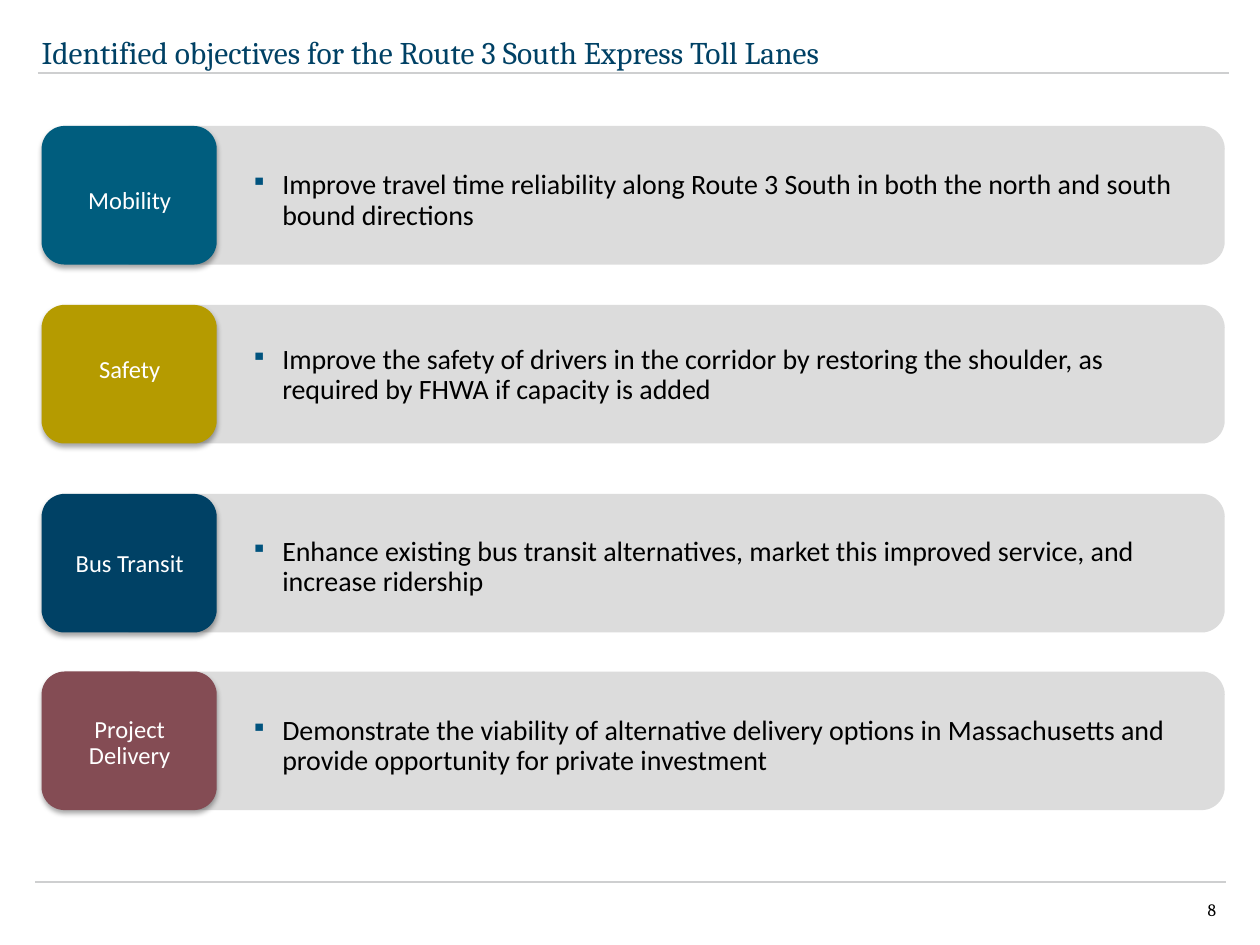
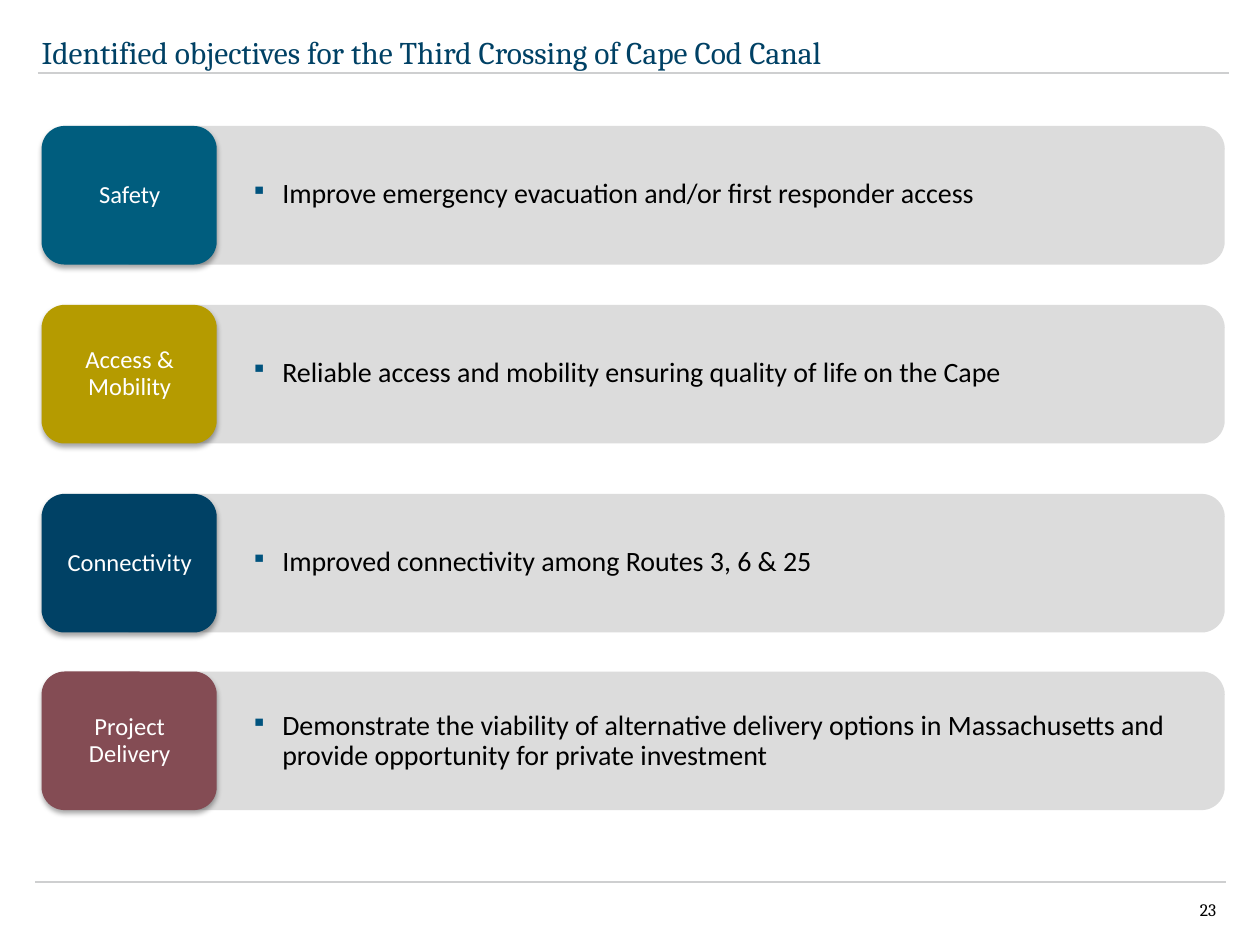
import dataclasses

import lxml.etree
import pptx
import pptx.dml.color
import pptx.enum.shapes
import pptx.enum.text
import pptx.oxml.ns
import pptx.util

Inches = pptx.util.Inches
Pt = pptx.util.Pt
qn = pptx.oxml.ns.qn
SHAPE = pptx.enum.shapes.MSO_SHAPE
ALIGN = pptx.enum.text.PP_ALIGN
ANCHOR = pptx.enum.text.MSO_ANCHOR


@dataclasses.dataclass(frozen=True)
class Theme:
    heading_font: str = "Cambria"
    body_font: str = "Calibri"
    title_size: int = 18
    body_size: int = 16
    label_size: int = 14
    page_size: int = 10
    navy: str = "004165"
    teal: str = "005D7E"
    gold: str = "B59B00"
    plum: str = "844C54"
    bullet: str = "00537E"
    band: str = "D9D9D9"
    rule: str = "CECFD0"
    black: str = "000000"
    white: str = "FFFFFF"


@dataclasses.dataclass(frozen=True)
class Row:
    top: float
    color: str
    band_left: float
    label_height: float
    goal_height: float


@dataclasses.dataclass(frozen=True)
class Objective:
    label: str
    label_top: float
    goal: str
    goal_top: float


THEME = Theme()
MARGIN = 0.33
TILE_WIDTH = 1.39
TILE_HEIGHT = 1.1
BAND_RIGHT = 9.72

ROWS = (
    Row(1.0, THEME.teal, 1.02, 0.88, 0.79),
    Row(2.42, THEME.gold, 0.72, 0.8, 0.88),
    Row(3.92, THEME.navy, 1.02, 0.9, 0.57),
    Row(5.33, THEME.plum, 1.02, 0.9, 0.57),
)

DELIVERY_GOAL = ("Demonstrate the viability of alternative delivery options in "
                 "Massachusetts and provide opportunity for private investment")

ROUTE_OBJECTIVES = (
    Objective("Mobility", 1.16,
              "Improve travel time reliability along Route 3 South in both the "
              "north and south bound directions", 1.2),
    Objective("Safety", 2.54,
              "Improve the safety of drivers in the corridor by restoring the "
              "shoulder, as required by FHWA if capacity is added", 2.54),
    Objective("Bus Transit", 4.03,
              "Enhance existing bus transit alternatives, market this improved "
              "service, and increase ridership", 4.22),
    Objective("Project Delivery", 5.45, DELIVERY_GOAL, 5.64),
)

CANAL_OBJECTIVES = (
    Objective("Safety", 1.11,
              "Improve emergency evacuation and/or first responder access", 1.15),
    Objective("Access & Mobility", 2.57,
              "Reliable access and mobility ensuring quality of life on the Cape",
              2.52),
    Objective("Connectivity", 4.02,
              "Improved connectivity among Routes 3, 6 & 25", 4.18),
    Objective("Project Delivery", 5.43, DELIVERY_GOAL, 5.6),
)


def rgb(color):
    return pptx.dml.color.RGBColor.from_string(color)


def add_xml(parent, tag, **attributes):
    child = lxml.etree.SubElement(parent, qn(tag))
    for name, value in attributes.items():
        child.set(name, str(value))
    return child


def add_bullet(paragraph):
    properties = paragraph._p.get_or_add_pPr()
    properties.set("marL", str(Inches(0.25)))
    properties.set("indent", str(Inches(-0.25)))
    bullet_color = add_xml(properties, "a:buClr")
    add_xml(bullet_color, "a:srgbClr", val=THEME.bullet)
    add_xml(properties, "a:buSzPct", val=80000)
    add_xml(properties, "a:buChar", char="▪")
    tabs = add_xml(properties, "a:tabLst")
    add_xml(tabs, "a:tab", pos=Inches(0.31), algn="l")


def add_text(shapes, text, left, top, width, height, *, size, color=THEME.black,
             font=THEME.body_font, align=ALIGN.LEFT, anchor=ANCHOR.MIDDLE,
             inset=(0.1, 0.05), spacing=1.0, after=0, bullet=False):
    box = shapes.add_textbox(Inches(left), Inches(top), Inches(width), Inches(height))
    frame = box.text_frame
    frame.word_wrap = True
    frame.vertical_anchor = anchor
    frame.margin_left = frame.margin_right = Inches(inset[0])
    frame.margin_top = frame.margin_bottom = Inches(inset[1])
    paragraph = frame.paragraphs[0]
    if bullet:
        paragraph.level = 1
        add_bullet(paragraph)
    paragraph.alignment = align
    paragraph.line_spacing = spacing
    paragraph.space_after = Pt(after)
    run = paragraph.add_run()
    run.text = text
    run.font.name = font
    run.font.size = Pt(size)
    run.font.color.rgb = rgb(color)


def add_rule(shapes, left, right, y):
    rule = shapes.add_connector(pptx.enum.shapes.MSO_CONNECTOR.STRAIGHT,
                                Inches(left), Inches(y), Inches(right), Inches(y))
    rule.line.color.rgb = rgb(THEME.rule)
    rule.line.width = Pt(0.75)
    add_xml(rule._element.spPr, "a:effectLst")


def add_block(shapes, kind, left, top, width, height, color):
    block = shapes.add_shape(kind, Inches(left), Inches(top),
                             Inches(width), Inches(height))
    block.shadow.inherit = False
    block.fill.solid()
    block.fill.fore_color.rgb = rgb(color)
    block.line.fill.background()
    return block


def add_band(shapes, row):
    length = BAND_RIGHT - row.band_left
    center_x = row.band_left + length / 2
    center_y = row.top + TILE_HEIGHT / 2
    band = add_block(shapes, SHAPE.ROUND_2_SAME_RECTANGLE,
                     center_x - TILE_HEIGHT / 2, center_y - length / 2,
                     TILE_HEIGHT, length, THEME.band)
    band.rotation = 90
    band_color = band._element.spPr.find(qn("a:solidFill"))[0]
    add_xml(band_color, "a:alpha", val=90000)


def add_tile(shapes, row):
    tile = add_block(shapes, SHAPE.ROUNDED_RECTANGLE, MARGIN, row.top,
                     TILE_WIDTH, TILE_HEIGHT, row.color)
    effects = tile._element.spPr.find(qn("a:effectLst"))
    shadow = add_xml(effects, "a:outerShdw", blurRad=Pt(3.1), dist=Pt(1.8),
                     dir=5400000, rotWithShape=0)
    shadow_color = add_xml(shadow, "a:srgbClr", val=THEME.black)
    add_xml(shadow_color, "a:alpha", val=35000)


def add_objective(slide, row, objective):
    shapes = slide.shapes.add_group_shape().shapes
    add_band(shapes, row)
    add_text(shapes, objective.goal, MARGIN + TILE_WIDTH, objective.goal_top,
             8.11, row.goal_height, size=THEME.body_size, inset=(0.27, 0.14),
             spacing=0.9, after=6, bullet=True)
    add_tile(shapes, row)
    add_text(shapes, objective.label, 0.36, objective.label_top,
             1.34, row.label_height, size=THEME.label_size, color=THEME.white,
             align=ALIGN.CENTER, inset=(0.07, 0.03), spacing=0.9, after=5)


def add_objectives_slide(deck, title, page, objectives):
    slide = deck.slides.add_slide(deck.slide_layouts[6])
    add_rule(slide.shapes, 0.3, 9.75, 0.58)
    add_rule(slide.shapes, 0.28, 9.73, 7)
    add_text(slide.shapes, title, MARGIN, 0.16, 9.5, 0.4, size=THEME.title_size,
             font=THEME.heading_font, color=THEME.navy, anchor=ANCHOR.BOTTOM,
             inset=(0, 0))
    add_text(slide.shapes, page, 9.33, 7.02, 0.42, 0.4, size=THEME.page_size,
             font=THEME.heading_font, align=ALIGN.RIGHT)
    for row, objective in zip(ROWS, objectives):
        add_objective(slide, row, objective)


def main():
    deck = pptx.Presentation()
    deck.slide_width = Inches(10)
    deck.slide_height = Inches(7.5)
    add_objectives_slide(
        deck, "Identified objectives for the Route 3 South Express Toll Lanes",
        "8", ROUTE_OBJECTIVES)
    add_objectives_slide(
        deck, "Identified objectives for the Third Crossing of Cape Cod Canal",
        "23", CANAL_OBJECTIVES)
    deck.save("out.pptx")


if __name__ == "__main__":
    main()
